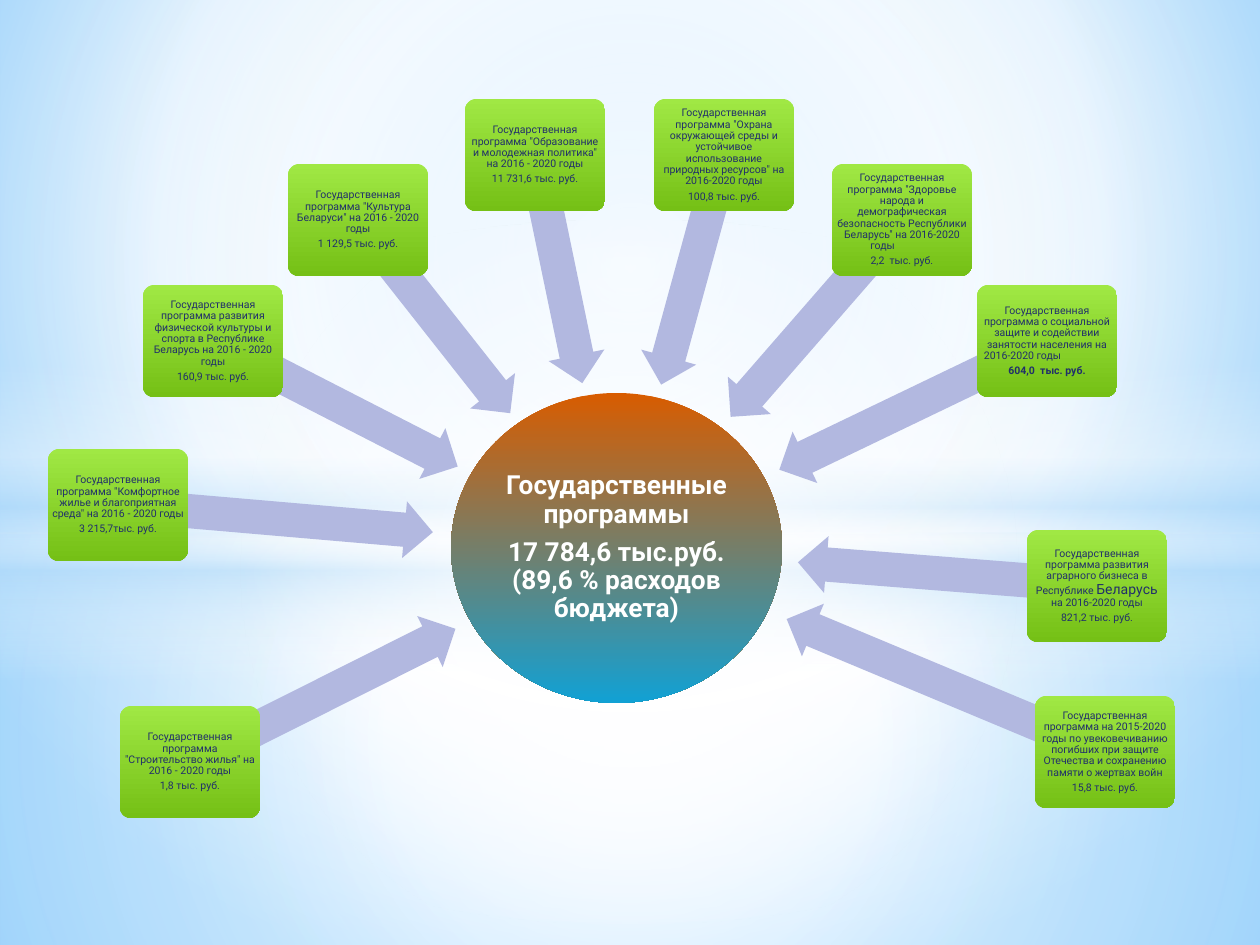
from math import atan2, cos, degrees, radians, sin

from lxml import etree
from pptx import Presentation
from pptx.dml.color import RGBColor
from pptx.enum.shapes import MSO_SHAPE
from pptx.enum.text import MSO_ANCHOR, PP_ALIGN
from pptx.oxml.ns import qn
from pptx.util import Emu, Pt

RECTANGLE, OVAL = MSO_SHAPE.RECTANGLE, MSO_SHAPE.OVAL
CARD_SHAPE, ARROW_SHAPE = MSO_SHAPE.ROUNDED_RECTANGLE, MSO_SHAPE.LEFT_ARROW
MIDDLE, CENTER = MSO_ANCHOR.MIDDLE, PP_ALIGN.CENTER

WHITE = RGBColor(0xFF, 0xFF, 0xFF)
SKY = RGBColor(0x9E, 0xD5, 0xFF)
DEEP_SKY = RGBColor(0x5B, 0xB9, 0xFF)
MIST = RGBColor(0xB4, 0xDC, 0xFA)
ORANGE = RGBColor(0xD8, 0x5C, 0x00)
CYAN = RGBColor(0x11, 0xA1, 0xD4)
LIME = RGBColor(0xA0, 0xE8, 0x44)
GREEN = RGBColor(0x75, 0xC0, 0x16)
LAVENDER = RGBColor(0xB2, 0xB8, 0xE0)
NAVY = RGBColor(0x21, 0x30, 0x6A)

FONT = "Roboto"
SLIDE_WIDTH, SLIDE_HEIGHT = 1260, 945
CARD_WIDTH, CARD_HEIGHT = 140, 112
ARROW_HEIGHT = 57
HUB_BOX = (451, 393, 331, 310)
CENTER_FOCUS = (50, 50, 50, 50)

BACKDROP = [(0, SKY, 100), (60, WHITE, 100), (100, DEEP_SKY, 100)]
BACKDROP_FOCUS = (20, 10, 20, 60)
LAYERS = [
    (RECTANGLE, (0, 533, 1260, 412), [(0, WHITE, 91), (37, WHITE, 76), (100, MIST, 79)], CENTER_FOCUS),
    (RECTANGLE, (0, 0, 1260, 533), [(0, WHITE, 89), (48, WHITE, 62), (100, MIST, 79)], CENTER_FOCUS),
    (RECTANGLE, (0, 365, 1260, 315),
     [(0, WHITE, 0), (29, WHITE, 30), (45, MIST, 40), (55, WHITE, 26), (65, MIST, 60), (100, WHITE, 0)], None),
    (OVAL, (0, 220, 1260, 703), [(0, WHITE, 100), (54, WHITE, 0)], CENTER_FOCUS),
]
HUB_GRADIENT = [(0, ORANGE, 100), (100, CYAN, 100)]
CARD_GRADIENT = [(0, LIME, 100), (100, GREEN, 100)]

HUB_TEXT = [
    [("Государственные программы", 15, True)],
    [("17 784,6 тыс.руб. (89,6 % расходов бюджета)", 15, True)],
]

# left, top, arrow length, programme, amount, amount in bold
PROGRAMMES = [
    (120, 706, 297, 'Государственная программа "Строительство жилья" на 2016 - 2020 годы', "1,8 тыс. руб.", False),
    (48, 449, 316, 'Государственная программа "Комфортное жилье и благоприятная среда" на 2016 - 2020 годы',
     "3 215,7тыс. руб.", False),
    (143, 285, 275, "Государственная программа развития физической культуры и спорта в Республике Беларусь"
     " на 2016 - 2020 годы", "160,9 тыс. руб.", False),
    (288, 164, 246, 'Государственная программа "Культура Беларуси" на 2016 - 2020 годы', "1 129,5 тыс. руб.", False),
    (465, 99, 233, 'Государственная программа "Образование и молодежная политика" на 2016 - 2020 годы',
     "11 731,6 тыс. руб.", False),
    (654, 99, 238, 'Государственная программа "Охрана окружающей среды и устойчивое использование природных'
     ' ресурсов" на 2016-2020 годы', "100,8 тыс. руб.", False),
    (832, 164, 261, 'Государственная программа "Здоровье народа и демографическая безопасность Республики'
     ' Беларусь" на 2016-2020 годы\t', "2,2  тыс. руб.", False),
    (977, 285, 297, "Государственная программа о социальной защите и содействии занятости населения"
     " на 2016-2020 годы\t", "604,0  тыс. руб.", True),
    (1027, 530, 300, [("Государственная программа развития аграрного бизнеса в Республике ", 6, False),
                      ("Беларусь", 8, False), (" на 2016-2020 годы", 6, False)], "821,2 тыс. руб.", False),
    (1035, 696, 345, "Государственная программа на 2015-2020 годы по увековечиванию погибших при защите Отечества"
     " и сохранению памяти о жертвах войн", "15,8 тыс. руб.", False),
]


def px(value):
    return Emu(round(value * 914400 / 126))


def set_gradient(owner, stops, focus=None):
    solid = next(owner.iter(qn("a:solidFill")))
    gradient = etree.Element(qn("a:gradFill"), rotWithShape="1")
    stop_list = etree.SubElement(gradient, qn("a:gsLst"))
    for position, color, opacity in stops:
        stop = etree.SubElement(stop_list, qn("a:gs"), pos=str(position * 1000))
        rgb = etree.SubElement(stop, qn("a:srgbClr"), val=str(color))
        if opacity < 100:
            etree.SubElement(rgb, qn("a:alpha"), val=str(opacity * 1000))
    if focus:
        circle = etree.SubElement(gradient, qn("a:path"), path="circle")
        sides = {side: str(share * 1000) for side, share in zip("ltrb", focus)}
        etree.SubElement(circle, qn("a:fillToRect"), **sides)
    else:
        etree.SubElement(gradient, qn("a:lin"), ang="5400000", scaled="0")
    solid.getparent().replace(solid, gradient)


def add_shape(slide, kind, box, color=WHITE, stops=None, focus=None):
    shape = slide.shapes.add_shape(kind, *map(px, box))
    shape.shadow.inherit = False
    shape.line.fill.background()
    shape.fill.solid()
    shape.fill.fore_color.rgb = color
    if stops:
        set_gradient(shape._element.spPr, stops, focus)
    return shape


def write_text(shape, paragraphs, color):
    frame = shape.text_frame
    frame.word_wrap = True
    frame.vertical_anchor = MIDDLE
    frame.margin_left = frame.margin_right = frame.margin_top = frame.margin_bottom = px(1)
    for index, runs in enumerate(paragraphs):
        paragraph = frame.add_paragraph() if index else frame.paragraphs[0]
        paragraph.alignment = CENTER
        paragraph.line_spacing = 0.9
        paragraph.space_after = Pt(runs[0][1] * 0.36)
        for text, size, bold in runs:
            run = paragraph.add_run()
            run.text = text
            run.font.name = FONT
            run.font.size = Pt(size)
            run.font.bold = bold
            run.font.color.rgb = color


def add_arrow(slide, start, target, length):
    angle = atan2(target[1] - start[1], target[0] - start[0])
    middle_x = start[0] + cos(angle) * length / 2
    middle_y = start[1] + sin(angle) * length / 2
    box = (middle_x - length / 2, middle_y - ARROW_HEIGHT / 2, length, ARROW_HEIGHT)
    arrow = add_shape(slide, ARROW_SHAPE, box, LAVENDER)
    arrow.adjustments[0], arrow.adjustments[1] = 0.6, 0.5
    arrow.rotation = degrees(angle + radians(180))


def main():
    presentation = Presentation()
    presentation.slide_width, presentation.slide_height = px(SLIDE_WIDTH), px(SLIDE_HEIGHT)
    slide = presentation.slides.add_slide(presentation.slide_layouts[6])
    slide.background.fill.solid()
    slide.background.fill.fore_color.rgb = WHITE
    set_gradient(slide._element, BACKDROP, BACKDROP_FOCUS)
    for kind, box, stops, focus in LAYERS:
        add_shape(slide, kind, box, stops=stops, focus=focus)

    hub = add_shape(slide, OVAL, HUB_BOX, stops=HUB_GRADIENT)
    write_text(hub, HUB_TEXT, WHITE)
    hub_left, hub_top, hub_width, hub_height = HUB_BOX
    hub_center = (hub_left + hub_width / 2, hub_top + hub_height / 2)

    for left, top, length, programme, amount, bold in PROGRAMMES:
        card_center = (left + CARD_WIDTH / 2, top + CARD_HEIGHT / 2)
        add_arrow(slide, card_center, hub_center, length)
        card = add_shape(slide, CARD_SHAPE, (left, top, CARD_WIDTH, CARD_HEIGHT), stops=CARD_GRADIENT)
        card.adjustments[0] = 0.1
        name_runs = [(programme, 6, False)] if isinstance(programme, str) else programme
        write_text(card, [name_runs, [(amount, 6, bold)]], NAVY)

    presentation.save("out.pptx")


if __name__ == "__main__":
    main()
